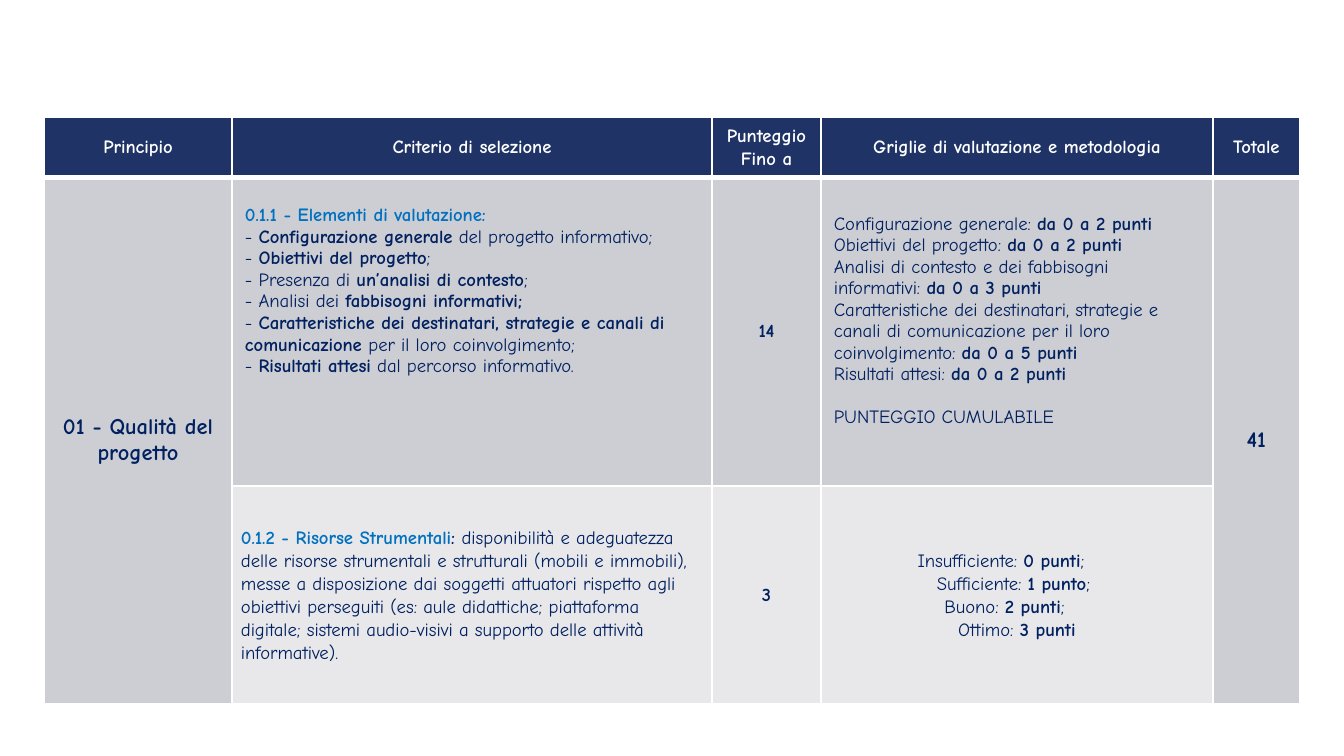
from lxml.etree import SubElement
from pptx import Presentation
from pptx.dml.color import RGBColor
from pptx.enum.text import MSO_ANCHOR, PP_ALIGN
from pptx.oxml import parse_xml
from pptx.oxml.ns import nsdecls
from pptx.util import Pt

PX = 914400 / 134.4
WHITE = RGBColor(0xFE, 0xFF, 0xFE)
NAVY = RGBColor(0x1F, 0x33, 0x66)
INK = RGBColor(0x00, 0x20, 0x60)
BLUE = RGBColor(0x00, 0x70, 0xC0)
GREY = RGBColor(0xCD, 0xCE, 0xD3)
PALE = RGBColor(0xE8, 0xE8, 0xEA)
LEFT, MID = PP_ALIGN.LEFT, PP_ALIGN.CENTER


def px(n):
    return round(n * PX)


def write(cell, lines, align=MID, size=10, color=INK, gap=None):
    """Fill a cell; text between asterisks is bold, criterion codes are blue."""
    frame = cell.text_frame
    for i, line in enumerate(lines):
        para = frame.paragraphs[0] if i == 0 else frame.add_paragraph()
        para.alignment = align
        if gap:
            para.line_spacing = gap
        for j, part in enumerate(line.split("*")):
            if part:
                run = para.add_run()
                run.text = part
                font = run.font
                font.name = "Comic Neue"
                font.size = Pt(size)
                font.bold = j % 2 == 1
                font.color.rgb = BLUE if part.startswith("0.1.") else color


prs = Presentation()
prs.slide_width, prs.slide_height = px(1344), px(756)
slide = prs.slides.add_slide(prs.slide_layouts[6])
slide.background.fill.solid()
slide.background.fill.fore_color.rgb = WHITE

widths = [188, 480, 109, 392, 87]
heights = [59, 309, 218]
table = slide.shapes.add_table(3, 5, px(44), px(117), px(sum(widths)), px(sum(heights))).table
table.first_row = table.horz_banding = False
for col, width in zip(table.columns, widths):
    col.width = px(width)
for row, height in zip(table.rows, heights):
    row.height = px(height)

# Fills, insets and borders; the rule under the header is thicker
for r, row in enumerate(table.rows):
    for c, cell in enumerate(row.cells):
        cell.fill.solid()
        cell.fill.fore_color.rgb = NAVY if r == 0 else PALE if r == 2 and 0 < c < 4 else GREY
        cell.vertical_anchor = MSO_ANCHOR.MIDDLE
        cell.margin_left = cell.margin_right = px(13 if r == 1 else 9)
        cell.margin_top = cell.margin_bottom = px(7)
        props = cell._tc.get_or_add_tcPr()
        for k, side in enumerate("LRTB"):
            thick = (r, side) in [(0, "B"), (1, "T")]
            line = parse_xml(f'<a:ln{side} {nsdecls("a")} w="{Pt(3 if thick else 0.96)}">'
                             f'<a:solidFill><a:srgbClr val="{WHITE}"/></a:solidFill></a:ln{side}>')
            props.insert(k, line)
for c in (0, 4):
    table.cell(1, c).merge(table.cell(2, c))

heads = [["*Principio*"], ["*Criterio di selezione*"], ["*Punteggio*", "*Fino a*"],
         ["*Griglie di valutazione e metodologia*"], ["*Totale*"]]
for c, lines in enumerate(heads):
    write(table.cell(0, c), lines, color=WHITE, gap=1.07)

write(table.cell(1, 0), ["*01 - Qualità del progetto*"], size=12)
write(table.cell(1, 2), ["*14*"])
write(table.cell(1, 4), ["*41*"], size=12)
write(table.cell(2, 2), ["*3*"], gap=1.07)

goals = table.cell(1, 1)
goals.vertical_anchor = MSO_ANCHOR.TOP
goals.margin_top = px(28)
write(goals, [
    "*0.1.1 - Elementi di valutazione:*",
    "- *Configurazione generale* del progetto informativo;",
    "- *Obiettivi del progetto*;",
    "- Presenza di *un’analisi di contesto*;",
    "- Analisi dei *fabbisogni informativi;*",
    "- *Caratteristiche dei destinatari, strategie e canali di comunicazione *"
    "per il loro coinvolgimento;",
    "- *Risultati attesi* dal percorso informativo.",
], LEFT)

points = table.cell(1, 3)
points.margin_bottom = px(28)
write(points, [
    "Configurazione generale: *da 0 a 2 punti*",
    "Obiettivi del progetto: *da 0 a 2 punti*",
    "Analisi di contesto e dei fabbisogni informativi: *da 0 a 3 punti*",
    "Caratteristiche dei destinatari, strategie e canali di comunicazione "
    "per il loro coinvolgimento: *da 0 a 5 punti*",
    "Risultati attesi: *da 0 a 2 punti*",
    "PUNTEGGIO CUMULABILE",
], LEFT)
points.text_frame.paragraphs[-1].space_before = Pt(11.5)

write(table.cell(2, 1), [
    "*0.1.2 - Risorse Strumentali**: *disponibilità e adeguatezza delle risorse "
    "strumentali e strutturali (mobili e immobili), messe a disposizione dai soggetti "
    "attuatori rispetto agli obiettivi perseguiti (es: aule didattiche; piattaforma "
    "digitale; sistemi audio-visivi a supporto delle attività informative).",
], LEFT, gap=1.07)
# The doubled asterisk closes one bold run and opens the next
colon = table.cell(2, 1).text_frame.paragraphs[0].runs[1]
colon.font.bold = True

# Centred lines stepped sideways by their left indents
grades = table.cell(2, 3)
grades.margin_right = px(41)
write(grades, ["Insufficiente: *0 punti*;", "Sufficiente: *1 punto*;",
               "Buono: *2 punti*;", "Ottimo: *3 punti*"], gap=1.07)
for para, indent in zip(grades.text_frame.paragraphs, [0, 25, 7, 32]):
    para._p.get_or_add_pPr().set("marL", str(px(indent)))

prs.save("out.pptx")
